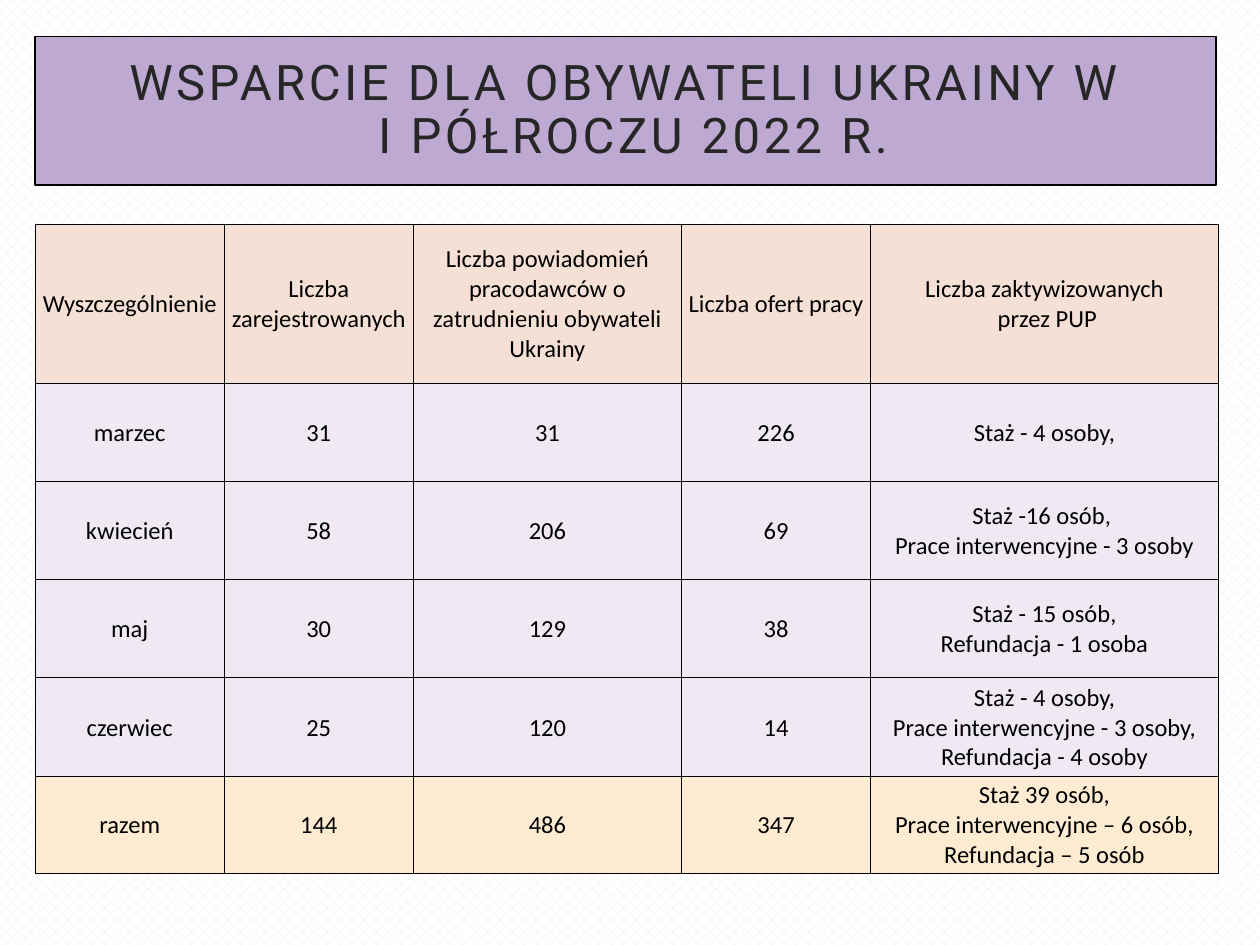
from lxml.etree import SubElement as Sub
from pptx import Presentation
from pptx.dml.color import RGBColor as RGB
from pptx.enum.dml import MSO_PATTERN as Pat
from pptx.enum.text import MSO_ANCHOR as Anchor, MSO_AUTO_SIZE as Fit, PP_ALIGN as Align
from pptx.oxml.ns import qn
from pptx.util import Inches, Pt

HUES = {
    "white": "FFFFFF", "black": "000000", "dark": "262626", "purple": "BEA9D3",
    "head": "F5E0D5", "body": "EEE9F3", "total": "FDECD2",
}
COLS = [1.5, 1.5, 2.13, 1.5, 2.76]
ROWS = [1.26] + [0.78] * 4 + [0.77]
LEFT, WIDE = Inches(0.28), Inches(9.37)

DATA = [
    ["Wyszczególnienie", "Liczba zarejestrowanych",
     "Liczba powiadomień pracodawców o zatrudnieniu obywateli Ukrainy",
     "Liczba ofert pracy", "Liczba zaktywizowanych\n przez PUP"],
    ["marzec", "31", "31", "226", "Staż - 4 osoby,"],
    ["kwiecień", "58", "206", "69", "Staż -16 osób, \nPrace interwencyjne - 3 osoby"],
    ["maj", "30", "129", "38", "Staż - 15 osób,\nRefundacja - 1 osoba"],
    ["czerwiec", "25", "120", "14",
     "Staż - 4 osoby,\nPrace interwencyjne - 3 osoby,\nRefundacja - 4 osoby"],
    ["razem", "144", "486", "347",
     "Staż 39 osób,\nPrace interwencyjne – 6 osób,\nRefundacja – 5 osób"],
]


def hue(name):
    return RGB.from_string(HUES[name])


def style(para, face, size, tint):
    para.alignment = Align.CENTER
    font = para.font
    font.name, font.size = face, Pt(size)
    font.color.rgb = hue(tint)


deck = Presentation()
deck.slide_width, deck.slide_height = Inches(10), Inches(7.5)
slide = deck.slides.add_slide(deck.slide_layouts[5])

# Patterned background
back = slide.background.fill
back.patterned()
back.pattern = Pat.PERCENT_30
back.fore_color.rgb, back.back_color.rgb = hue("body"), hue("white")

# Title band
title = slide.shapes.title
title.left, title.top = LEFT, Inches(0.29)
title.width, title.height = WIDE, Inches(1.18)
title.fill.solid()
title.fill.fore_color.rgb = hue("purple")
title.line.color.rgb, title.line.width = hue("black"), Pt(1)
frame = title.text_frame
frame.auto_size, frame.word_wrap = Fit.NONE, True
frame.vertical_anchor = Anchor.MIDDLE
frame.margin_left = frame.margin_right = Inches(0.2)
frame.margin_top = frame.margin_bottom = Inches(0.2)
para = frame.paragraphs[0]
para.text = "WSPARCIE DLA OBYWATELI UKRAINY W\v I PÓŁROCZU 2022 R."
para.line_spacing = 0.9
style(para, "Roboto", 28, "dark")
for run in para.runs:
    run.font.language_id = None
    run._r.get_or_add_rPr().set("spc", "200")

# Table grid
table = slide.shapes.add_table(
    len(ROWS), len(COLS), LEFT, Inches(1.78), WIDE, Inches(sum(ROWS))).table
for col, wide in zip(table.columns, COLS):
    col.width = Inches(wide)
for row, high in zip(table.rows, ROWS):
    row.height = Inches(high)

# Cells: text, fill and thin borders
tints = ["head"] + ["body"] * 4 + ["total"]
for row, texts, tint in zip(table.rows, DATA, tints):
    for cell, text in zip(row.cells, texts):
        cell.text = text
        cell.vertical_anchor = Anchor.MIDDLE
        cell.margin_left = cell.margin_right = cell.margin_top = Inches(0.01)
        cell.margin_bottom = 0
        for para in cell.text_frame.paragraphs:
            style(para, "Calibri", 14, "black")
        props = cell._tc.get_or_add_tcPr()
        for side in ("a:lnL", "a:lnR", "a:lnT", "a:lnB"):
            line = Sub(props, qn(side), w=str(Pt(0.5)))
            Sub(Sub(line, qn("a:solidFill")), qn("a:srgbClr"), val=HUES["black"])
        cell.fill.solid()
        cell.fill.fore_color.rgb = hue(tint)

deck.save("out.pptx")
